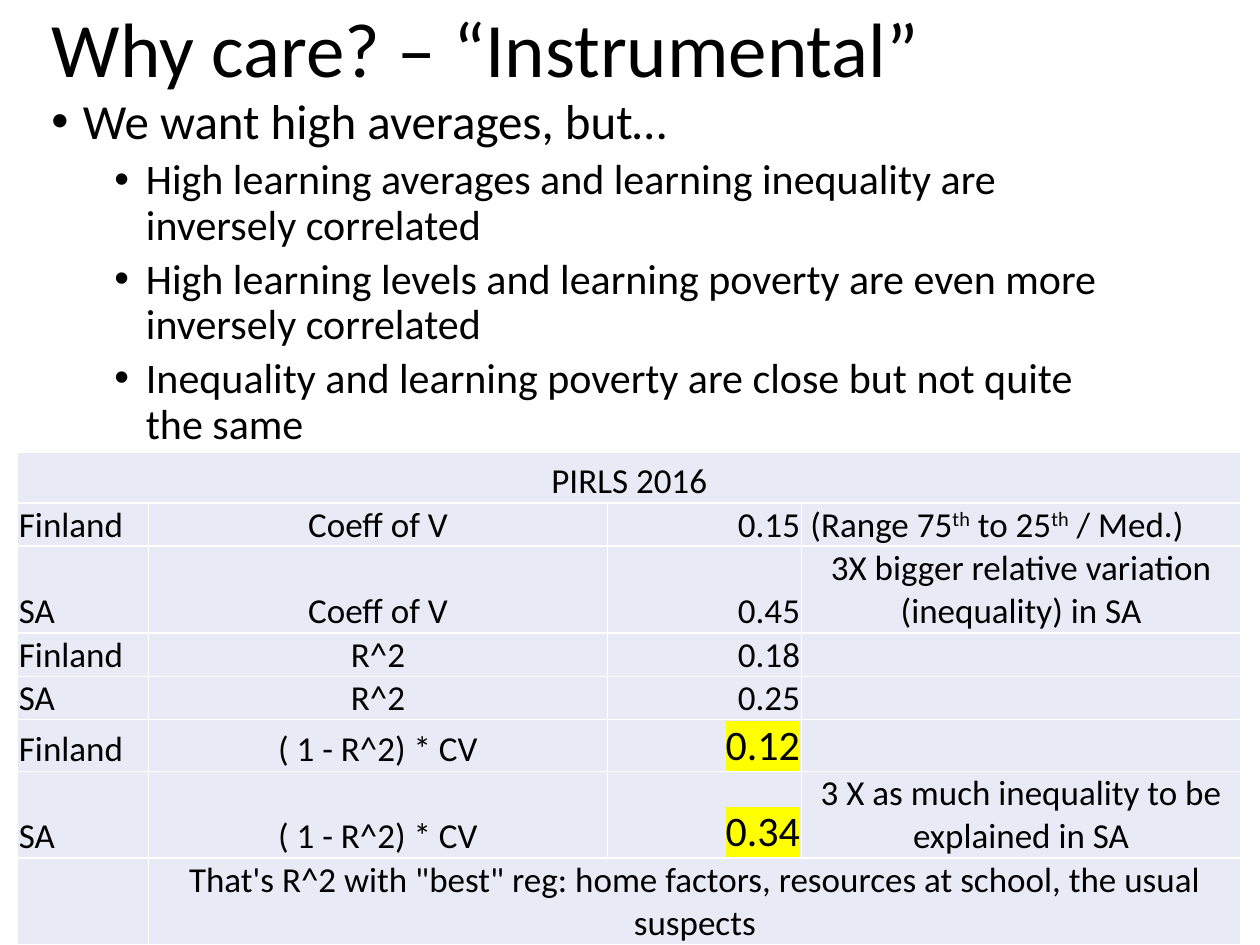
from lxml.etree import SubElement
from pptx import Presentation
from pptx.dml.color import RGBColor
from pptx.enum.text import MSO_ANCHOR, MSO_AUTO_SIZE, PP_ALIGN
from pptx.oxml.ns import qn
from pptx.util import Inches, Pt

FONT = "Calibri"
BLACK, WHITE, PALE, YELLOW = "000000", "FFFFFF", "E8EBF5", "FFFF00"
LEFT, MID, RIGHT = PP_ALIGN.LEFT, PP_ALIGN.CENTER, PP_ALIGN.RIGHT

POINTS = [
    (0, "We want high averages, but…"),
    (1, "High learning averages and learning inequality are inversely correlated"),
    (1, "High learning levels and learning poverty are even more inversely correlated"),
    (1, "Inequality and learning poverty are close but not quite the same"),
]
WIDTHS = [1.04, 3.64, 1.54, 3.49]
HEIGHTS = [0.4, 0.34, 0.69, 0.34, 0.34, 0.41, 0.69, 0.69]
ALIGNS = [LEFT, MID, RIGHT, MID]
RANGE = " (Range 75|th| to 25|th| / Med.)"
ROWS = [
    ["PIRLS 2016", "", "", ""],
    ["Finland", "Coeff of V", "0.15", RANGE],
    ["SA", "Coeff of V", "0.45", "3X bigger relative variation (inequality) in SA"],
    ["Finland", "R^2", "0.18", ""],
    ["SA", "R^2", "0.25", ""],
    ["Finland", "( 1 - R^2) * CV", "0.12", ""],
    ["SA", "( 1 - R^2) * CV", "0.34", "3 X as much inequality to be explained in SA"],
    ["", "That's R^2 with \"best\" reg: home factors, resources at school, the usual suspects", "", ""],
]
MERGES = [(0, 0), (7, 1)]
KEYS = ["0.12", "0.34"]


def paint(hue):
    """Turn a hex string into a colour."""
    return RGBColor.from_string(hue)


def style(para, size, align=LEFT):
    """Format a paragraph and all its runs."""
    para.alignment = align
    for run in para.runs:
        run.font.size = Pt(size)
        run.font.name = FONT
        run.font.color.rgb = paint(BLACK)


def mark(run, hue):
    """Highlight a run."""
    light = SubElement(run.font.fill._xPr, qn("a:highlight"))
    SubElement(light, qn("a:srgbClr")).set("val", hue)
    run._r.rPr.find(qn("a:solidFill")).addnext(light)


def bullet(para, left):
    """Give a paragraph a hanging bullet."""
    props = para._p.get_or_add_pPr()
    props.set("marL", str(Inches(left)))
    props.set("indent", str(Inches(-0.25)))
    SubElement(props, qn("a:buFont")).set("typeface", "Arial")
    SubElement(props, qn("a:buChar")).set("char", "•")


def border(cell):
    """Draw thin white lines round a cell."""
    props = cell._tc.get_or_add_tcPr()
    for side in "LRTB":
        line = SubElement(props, qn(f"a:ln{side}"), w=str(Pt(1)))
        fill = SubElement(line, qn("a:solidFill"))
        SubElement(fill, qn("a:srgbClr")).set("val", WHITE)


def add_title(slide, text):
    """Fill and place the title."""
    title = slide.shapes.title
    title.left, title.top = Inches(0.31), Inches(-0.31)
    title.width, title.height = Inches(8.62), Inches(1.45)
    frame = title.text_frame
    frame.text = text
    frame.auto_size = MSO_AUTO_SIZE.NONE
    frame.vertical_anchor = MSO_ANCHOR.MIDDLE
    frame.paragraphs[0].line_spacing = 0.9
    style(frame.paragraphs[0], 44)


def add_points(slide):
    """Add the bulleted text."""
    box = slide.shapes.add_textbox(Inches(0.31), Inches(0.72), Inches(8.62), Inches(4.76))
    frame = box.text_frame
    frame.word_wrap = True
    frame.text = "\n".join(text for _, text in POINTS)
    for para, (level, _) in zip(frame.paragraphs, POINTS):
        para.level = level
        para.line_spacing = 0.9
        para.space_before = Pt(5 * level)
        style(para, 28 - 4 * level)
        bullet(para, 0.25 + 0.5 * level)


def fill_cell(cell, text, align):
    """Write and format one cell; text between bars is raised."""
    cell.margin_left = cell.margin_right = cell.margin_top = Inches(0.01)
    cell.margin_bottom = 0
    cell.vertical_anchor = MSO_ANCHOR.BOTTOM
    border(cell)
    cell.fill.solid()
    cell.fill.fore_color.rgb = paint(PALE)
    if not text:
        return
    para = cell.text_frame.paragraphs[0]
    for spot, part in enumerate(text.split("|")):
        run = para.add_run()
        run.text = part
        if spot % 2:
            run.font._element.set("baseline", "30000")
    style(para, 24 if text in KEYS else 20, align)
    if text in KEYS:
        mark(para.runs[0], YELLOW)


def add_grid(slide):
    """Add the table of scores."""
    frame = slide.shapes.add_table(len(ROWS), len(WIDTHS), Inches(0.14), Inches(3.59),
                                   Inches(sum(WIDTHS)), Inches(sum(HEIGHTS)))
    table = frame.table
    table.first_row = table.horz_banding = False
    for col, width in zip(table.columns, WIDTHS):
        col.width = Inches(width)
    for row, height in zip(table.rows, HEIGHTS):
        row.height = Inches(height)
    for r, texts in enumerate(ROWS):
        for c, text in enumerate(texts):
            align = MID if (r, c) in MERGES else LEFT if text == RANGE else ALIGNS[c]
            fill_cell(table.cell(r, c), text, align)
    for r, c in MERGES:
        table.cell(r, c).merge(table.cell(r, len(WIDTHS) - 1))


def main():
    """Build and save the slide."""
    deck = Presentation()
    deck.slide_width, deck.slide_height = Inches(10), Inches(7.5)
    slide = deck.slides.add_slide(deck.slide_layouts[5])
    add_title(slide, "Why care? – “Instrumental”")
    add_points(slide)
    add_grid(slide)
    deck.save("out.pptx")


if __name__ == "__main__":
    main()
